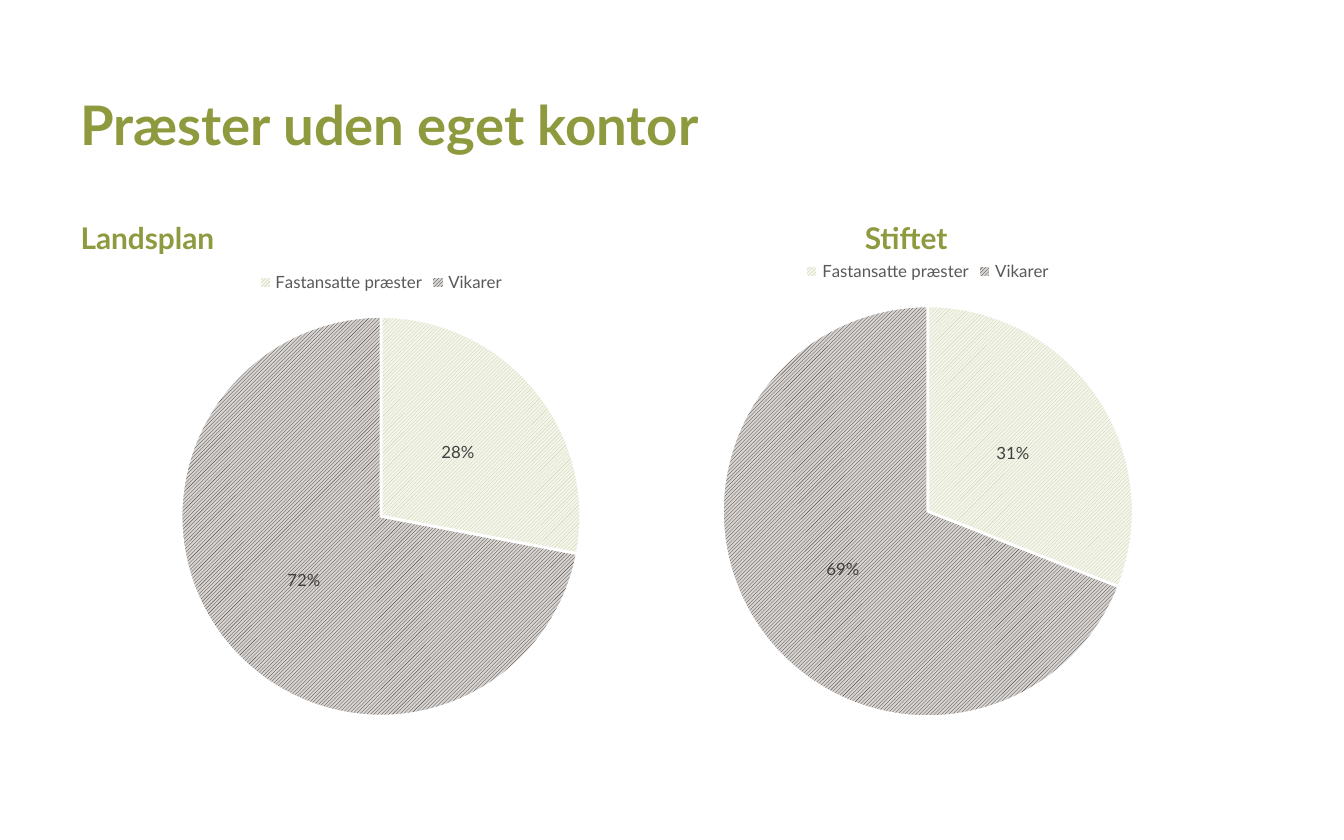
from lxml.etree import SubElement
from pptx import Presentation
from pptx.chart.data import CategoryChartData
from pptx.dml.color import RGBColor
from pptx.enum.chart import XL_CHART_TYPE, XL_LABEL_POSITION, XL_LEGEND_POSITION
from pptx.enum.dml import MSO_PATTERN
from pptx.enum.text import MSO_ANCHOR, MSO_AUTO_SIZE, PP_ALIGN
from pptx.oxml.ns import qn
from pptx.util import Cm, Pt

OLIVE = RGBColor(0x8F, 0x99, 0x3E)
PALE_OLIVE = RGBColor(0xC7, 0xCC, 0x9E)
CREAM = RGBColor(0xF4, 0xF5, 0xEC)
CHARCOAL = RGBColor(0x2D, 0x29, 0x26)
STONE = RGBColor(0xD8, 0xD4, 0xD1)
LEGEND_GREY = RGBColor(0x59, 0x59, 0x59)
LABEL_GREY = RGBColor(0x40, 0x40, 0x40)
BLACK = RGBColor(0, 0, 0)
WHITE = RGBColor(0xFF, 0xFF, 0xFF)

TITLE = "Præster uden eget kontor"
CATEGORIES = ["Fastansatte præster", "Vikarer"]
SLICE_COLOURS = [(PALE_OLIVE, CREAM), (CHARCOAL, STONE)]
PIES = [
    {"heading": "Landsplan", "values": (28, 72), "place": (-0.51, 4.85, 15.42, 9.04)},
    {"heading": "Stiftet", "values": (31, 69), "place": (9.37, 4.65, 16.33, 9.25)},
]
TITLE_PLACE = (1.27, 1.6, 22.86, 1.75)
HEADING_TAB = Cm(14.82)


def apply(target, formats):
    """Set each attribute named in formats."""
    for name, value in formats.items():
        setattr(target, name, value)


def style_font(font, size, colour, bold=False):
    """Give a font its face, size, weight and colour."""
    apply(font, {"name": "Lato", "size": Pt(size), "bold": bold})
    font.color.rgb = colour


def write_title(page):
    """Write the title and the tabbed headings above the pies."""
    box = page.shapes.title
    apply(box, dict(zip(("left", "top", "width", "height"), map(Cm, TITLE_PLACE))))
    frame = box.text_frame
    apply(frame, {"word_wrap": True, "auto_size": MSO_AUTO_SIZE.NONE,
                  "vertical_anchor": MSO_ANCHOR.TOP})
    headings = "\t".join(pie["heading"] for pie in PIES)
    lines = [(TITLE, 29.2, 0), (headings, 16, 34)]
    for index, (text, size, gap) in enumerate(lines):
        para = frame.add_paragraph() if index else frame.paragraphs[0]
        apply(para, {"alignment": PP_ALIGN.LEFT, "line_spacing": 1.0,
                     "space_before": Pt(gap)})
        span = para.add_run()
        span.text = text
        style_font(span.font, size, OLIVE, bold=True)
    tabs = SubElement(para._p.get_or_add_pPr(), qn("a:tabLst"))
    SubElement(tabs, qn("a:tab"), pos=str(HEADING_TAB), algn="l")


def add_pie(page, pie):
    """Add one pie with hatched slices, percentages and a legend."""
    data = CategoryChartData()
    data.categories = CATEGORIES
    data.add_series("Series 1", pie["values"])
    chart = page.shapes.add_chart(
        XL_CHART_TYPE.PIE, *map(Cm, pie["place"]), data).chart
    apply(chart, {"has_title": False, "has_legend": True})
    style_font(chart.font, 10, BLACK)
    apply(chart.legend, {"position": XL_LEGEND_POSITION.TOP, "include_in_layout": False})
    style_font(chart.legend.font, 9, LEGEND_GREY)
    plot = chart.plots[0]
    apply(plot, {"vary_by_categories": True, "has_data_labels": True})
    apply(plot.data_labels, {"show_percentage": True, "show_value": False,
                             "number_format": "0%", "number_format_is_linked": False,
                             "position": XL_LABEL_POSITION.CENTER})
    style_font(plot.data_labels.font, 9, LABEL_GREY)
    for index, (hatch, ground) in enumerate(SLICE_COLOURS):
        look = plot.series[0].points[index].format
        look.fill.patterned()
        look.fill.pattern = MSO_PATTERN.LIGHT_UPWARD_DIAGONAL
        look.fill.fore_color.rgb = hatch
        look.fill.back_color.rgb = ground
        look.line.color.rgb = WHITE
        look.line.width = Pt(1.5)


def main():
    """Build the slide and save it."""
    deck = Presentation()
    apply(deck, {"slide_width": Cm(25.4), "slide_height": Cm(15.88)})
    page = deck.slides.add_slide(deck.slide_layouts.get_by_name("Title Only"))
    write_title(page)
    for pie in PIES:
        add_pie(page, pie)
    deck.save("out.pptx")


if __name__ == "__main__":
    main()
